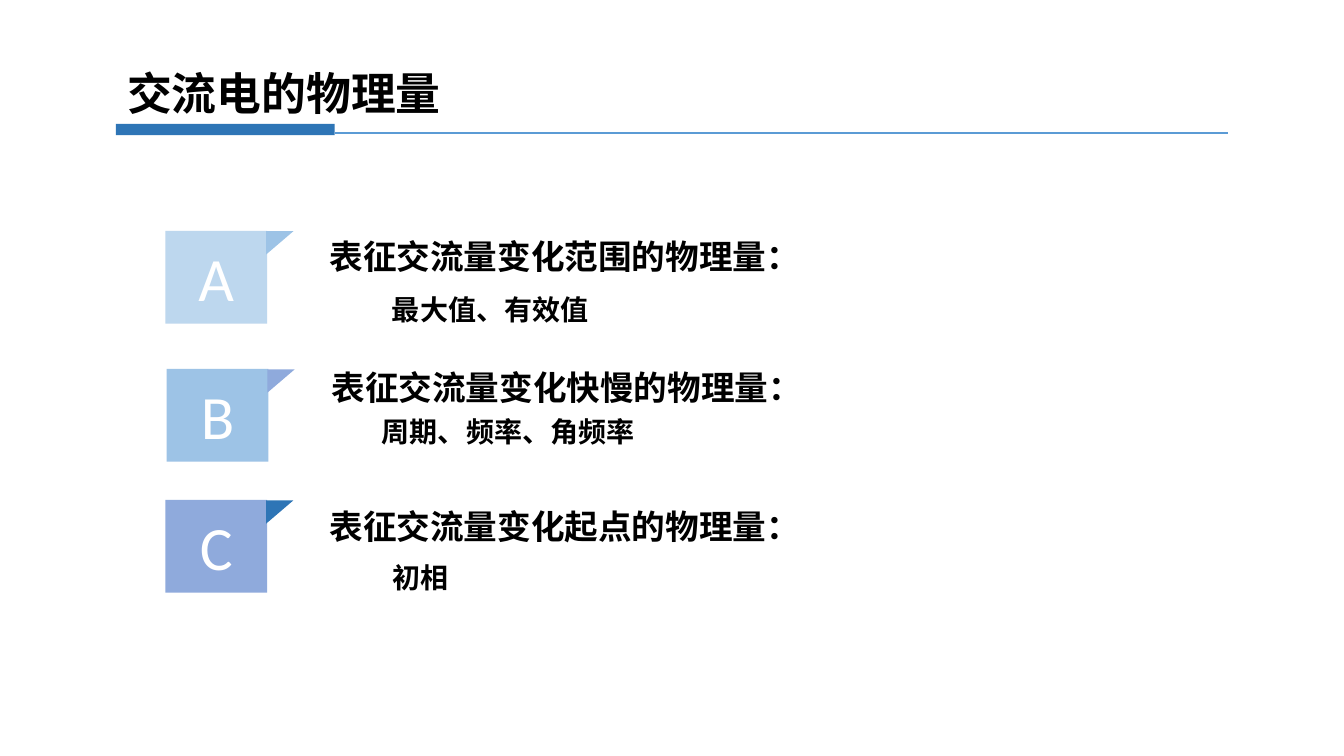
from lxml import etree
from pptx import Presentation
from pptx.dml.color import RGBColor
from pptx.enum.shapes import MSO_CONNECTOR, MSO_SHAPE
from pptx.enum.text import MSO_ANCHOR, MSO_AUTO_SIZE, PP_ALIGN
from pptx.oxml.ns import qn
from pptx.util import Inches, Pt

RECTANGLE, TRIANGLE = MSO_SHAPE.RECTANGLE, MSO_SHAPE.ISOSCELES_TRIANGLE
STRAIGHT = MSO_CONNECTOR.STRAIGHT
TOP, MIDDLE = MSO_ANCHOR.TOP, MSO_ANCHOR.MIDDLE
LEFT, CENTER = PP_ALIGN.LEFT, PP_ALIGN.CENTER
FIXED = MSO_AUTO_SIZE.NONE

COLORS = {
    "text": "000000", "letter": "FFFFFF", "rule": "5B9BD5", "deep": "2E75B6",
    "pale": "BDD7EE", "sky": "9DC3E6", "violet": "8FAADC",
}
CJK, LATIN = "Noto Sans CJK SC", "Calibri"

deck = Presentation()
deck.slide_width, deck.slide_height = Inches(13.33), Inches(7.5)
COL, ROW = deck.slide_width / 100, deck.slide_height / 100
slide = deck.slides.add_slide(deck.slide_layouts[5])
shapes = slide.shapes


def add_block(kind, col, row, cols, rows, color):
    block = shapes.add_shape(kind, int(col * COL), int(row * ROW), int(cols * COL), int(rows * ROW))
    block.shadow.inherit = False
    block.fill.solid()
    block.fill.fore_color.rgb = RGBColor.from_string(COLORS[color])
    block.line.fill.background()
    return block


def write(frame, words, size, font, color, bold, align, anchor, wrap):
    frame.auto_size = FIXED
    frame.word_wrap = wrap
    frame.vertical_anchor = anchor
    paragraph = frame.paragraphs[0]
    paragraph.alignment = align
    run = paragraph.add_run()
    run.text = words
    run.font.size, run.font.bold, run.font.name = Pt(size), bold, font
    run.font.color.rgb = RGBColor.from_string(COLORS[color])
    etree.SubElement(run.font._element, qn("a:ea")).set("typeface", CJK)


add_block(RECTANGLE, 8.63, 16.4, 16.28, 1.47, "deep")
rule = shapes.add_connector(STRAIGHT, int(24.91 * COL), int(17.6 * ROW), int(91.37 * COL), int(17.6 * ROW))
rule.line.color.rgb = RGBColor.from_string(COLORS["rule"])
rule.line.width = Pt(2)
etree.SubElement(rule._element.spPr, qn("a:effectLst"))

title = shapes.title
title.left, title.top = int(8.7 * COL), int(8 * ROW)
title.width, title.height = int(25.2 * COL), int(8.53 * ROW)
write(title.text_frame, "交流电的物理量", 32, CJK, "text", True, LEFT, TOP, False)

quantities = [
    ("A", "pale", "sky", 12.3, 30.53,
     "表征交流量变化范围的物理量：", 23.78, 30.53, "最大值、有效值", 28.43, 38),
    ("B", "sky", "violet", 12.4, 48.8,
     "表征交流量变化快慢的物理量：", 23.93, 47.87, "周期、频率、角频率", 27.68, 54.13),
    ("C", "violet", "deep", 12.3, 66.13,
     "表征交流量变化起点的物理量：", 23.78, 66.27, "初相", 28.5, 73.47),
]
for (letter, tile_color, fold_color, tile_col, tile_row,
     heading, heading_col, heading_row, detail, detail_col, detail_row) in quantities:
    tile = add_block(RECTANGLE, tile_col, tile_row, 7.58, 12.27, tile_color)
    write(tile.text_frame, letter, 44, LATIN, "letter", False, CENTER, MIDDLE, True)
    fold = add_block(TRIANGLE, tile_col + 7.65, tile_row - 0.2, 1.73, 3.6, fold_color)
    fold.adjustments[0] = 0
    fold.rotation = 90
    for words, col, row, cols, rows, size, wrap in (
        (heading, heading_col, heading_row, 37.06, 6.67, 24, False),
        (detail, detail_col, detail_row, 24.3, 5.87, 20, True),
    ):
        label = shapes.add_textbox(int(col * COL), int(row * ROW), int(cols * COL), int(rows * ROW))
        write(label.text_frame, words, size, CJK, "text", True, LEFT, TOP, wrap)

deck.save("out.pptx")
